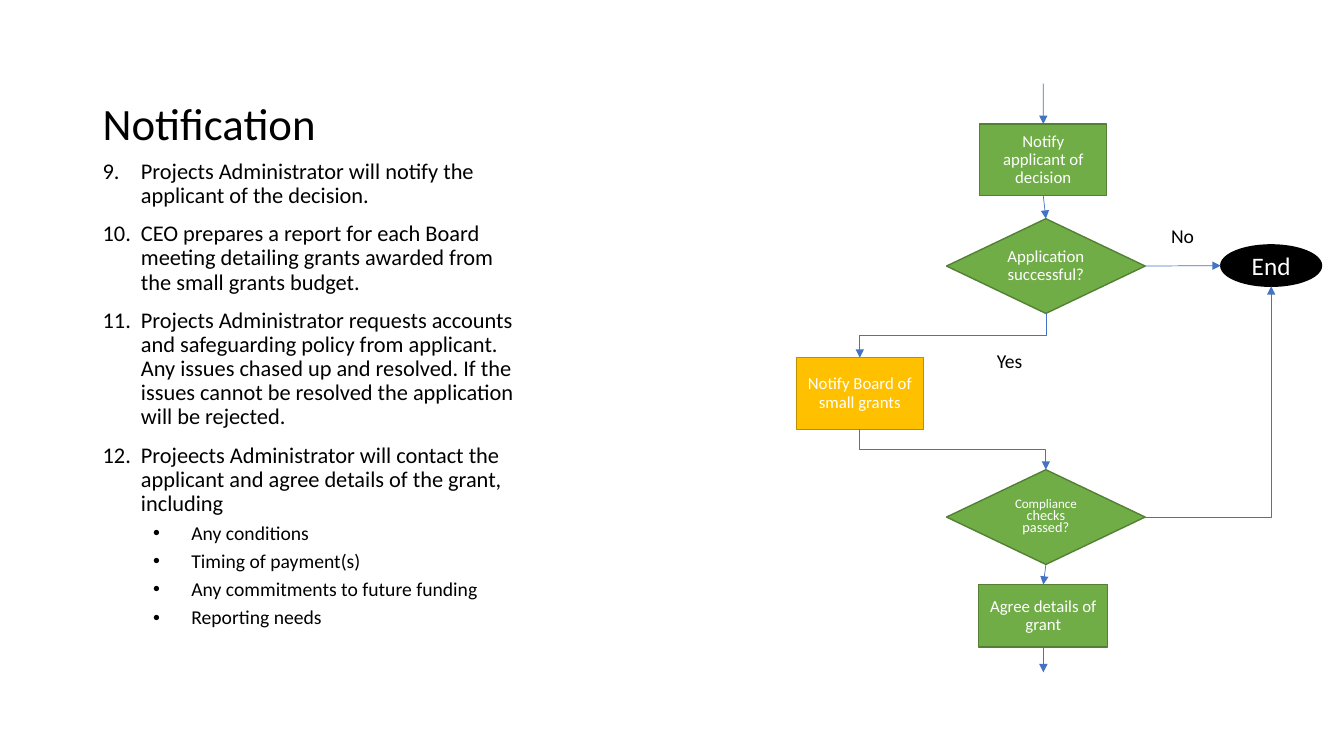
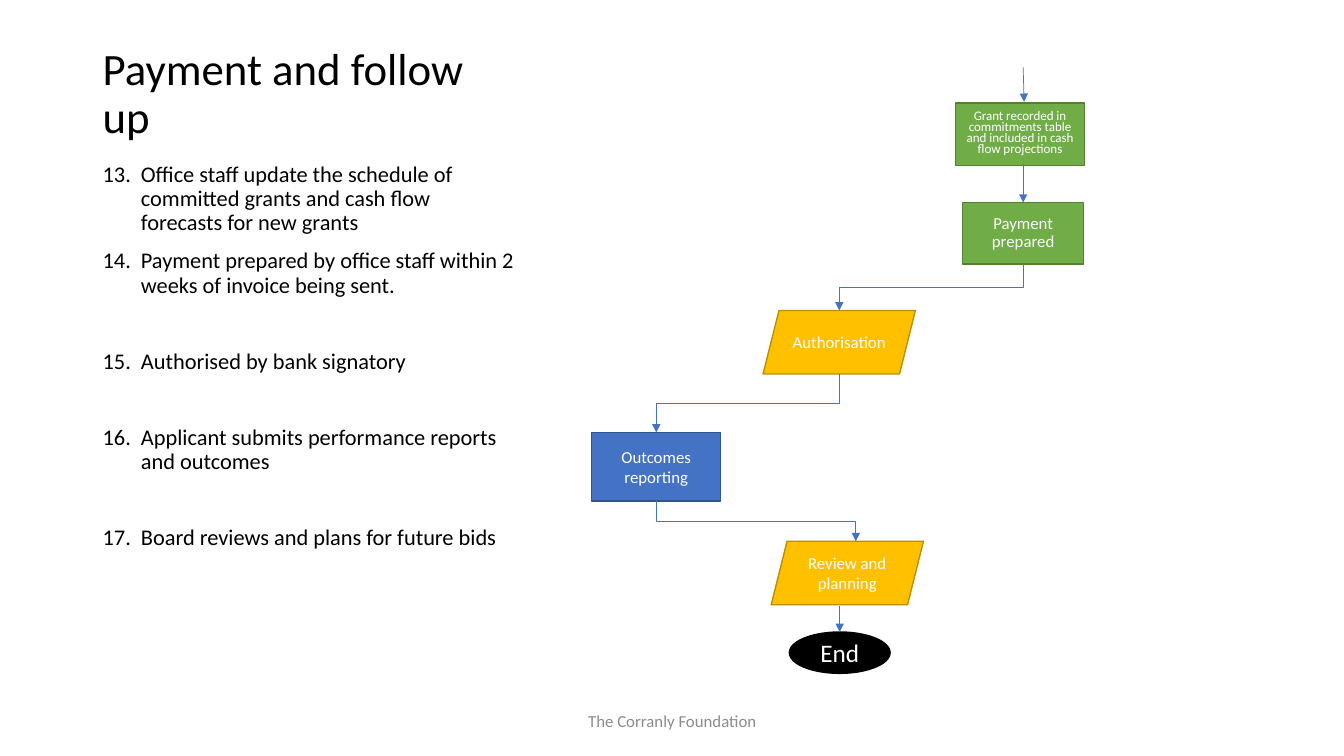
import lxml.etree
import pptx
import pptx.dml.color
import pptx.enum.shapes
import pptx.enum.text
import pptx.oxml.ns
import pptx.util

qn = pptx.oxml.ns.qn
SHAPE = pptx.enum.shapes.MSO_SHAPE
LINE = pptx.enum.shapes.MSO_CONNECTOR
ANCHOR = pptx.enum.text.MSO_ANCHOR
ALIGN = pptx.enum.text.PP_ALIGN

# Shared look: colours, font and a grid of 100 columns by 100 rows
FONT = "Calibri"
BLACK, WHITE, GREY, BLUE = "000000", "FFFFFF", "8C8C8C", "4472C4"
GREEN_BOX = ("70AD47", "538035")
GOLD_BOX = ("FFC000", "BD8E00")
BLUE_BOX = (BLUE, "325491")
BLACK_BOX = (BLACK, BLACK)
TEXT_LEFT, TEXT_WIDTH, TEXT_BOTTOM = 6.9, 32.25, 85.6
TITLE_TOP = 6.67
STEP, SMALL_STEP, PAYMENT = (9.45, 9.47), (9.6, 8.27), (9, 8.13)
DECISION, SLANTED, REPORT, END = (14.78, 12.53), (11.33, 8.4), (9.6, 9.07), (7.5, 5.47)
SITES = [(0.5, 0), (0, 0.5), (0.5, 1), (1, 0.5)]
TOP, LEFT, BOTTOM, RIGHT = range(4)

prs = pptx.Presentation()
prs.slide_width = pptx.util.Inches(13.33)
prs.slide_height = pptx.util.Inches(7.5)
COL, ROW = prs.slide_width / 100, prs.slide_height / 100


def paint(fill, color):
    fill.solid()
    fill.fore_color.rgb = pptx.dml.color.RGBColor.from_string(color)


def write(sp, text, size=12, color=BLACK, align=ALIGN.LEFT, anchor=ANCHOR.TOP,
          wrap=True, spacing=1.0, before=0, bullet=None):
    """Add one paragraph; text is a string or a list of (text, size) runs."""
    tf = sp.text_frame
    tf.word_wrap, tf.vertical_anchor = wrap, anchor
    p = tf.add_paragraph() if tf.text else tf.paragraphs[0]
    p.alignment, p.line_spacing = align, spacing
    p.space_before = pptx.util.Pt(before)
    if bullet:
        numbered = isinstance(bullet, int)
        p.level = 0 if numbered else 1
        pPr = p._p.get_or_add_pPr()
        pPr.set("marL", str(pptx.util.Inches(0.38 if numbered else 0.88)))
        pPr.set("indent", str(pptx.util.Inches(-0.38)))
        if numbered:
            lxml.etree.SubElement(pPr, qn("a:buAutoNum"), type="arabicPeriod", startAt=str(bullet))
        else:
            lxml.etree.SubElement(pPr, qn("a:buFont"), typeface="Arial")
            lxml.etree.SubElement(pPr, qn("a:buChar"), char=bullet)
    for part, points in text if isinstance(text, list) else [(text, size)]:
        r = p.add_run()
        r.text = part
        r.font.name, r.font.size = FONT, pptx.util.Pt(points)
        paint(r.font.fill, color)


# Content. Items: (text, space before). Nodes: name, shape, left, top, size,
# colours, text, format. Arrows: kind, start, end; an end is a point or a node's side.
tight = {"spacing": 0.9}
dense = {"spacing": 0.7, "size": 9.3}
slides = [
    {
        "title": "Notification", "body_top": 20.53, "first": 9,
        "items": [
            ("Projects Administrator will notify the applicant of the decision.", 10),
            ("CEO prepares a report for each Board meeting detailing grants awarded "
             "from the small grants budget.", 10),
            ("Projects Administrator requests accounts and safeguarding policy from applicant. "
             "Any issues chased up and resolved. If the issues cannot be resolved the "
             "application will be rejected.", 10),
            ("Projeects Administrator will contact the applicant and agree details "
             "of the grant, including", 10),
        ],
        "subitems": ["Any conditions", "Timing of payment(s)",
                     "Any commitments to future funding", "Reporting needs"],
        "nodes": [
            ("notify", SHAPE.RECTANGLE, 72.9, 16.4, STEP, GREEN_BOX,
             "Notify applicant of decision", tight),
            ("successful", SHAPE.DIAMOND, 70.43, 28.93, DECISION, GREEN_BOX,
             "Application successful?", tight),
            ("end", SHAPE.OVAL, 90.83, 32.4, END, BLACK_BOX, "End", {"size": 18}),
            ("board", SHAPE.RECTANGLE, 59.25, 47.33, STEP, GOLD_BOX,
             "Notify Board of small grants", tight),
            ("compliance", SHAPE.DIAMOND, 70.43, 62.13, DECISION, GREEN_BOX,
             [("Compliance", 9.3), (" checks passed?", 10.2)], dense),
            ("agree", SHAPE.RECTANGLE, 72.83, 77.33, SMALL_STEP, GREEN_BOX,
             "Agree details of grant", tight),
        ],
        "arrows": [
            ("straight", (77.63, 11.07), ("notify", TOP)),
            ("straight", ("notify", BOTTOM), ("successful", TOP)),
            ("straight", ("successful", RIGHT), ("end", LEFT)),
            ("step", ("successful", BOTTOM), ("board", TOP)),
            ("step", ("board", BOTTOM), ("compliance", TOP)),
            ("corner", ("compliance", RIGHT), ("end", BOTTOM)),
            ("straight", ("compliance", BOTTOM), ("agree", TOP)),
            ("straight", ("agree", BOTTOM), (77.63, 88.93)),
        ],
        "labels": [
            ("No", (86.4, 28.93, 3.45, 4.53), {"size": 14, "wrap": False}),
            ("Yes", (73.43, 45.47, 3.6, 4.53), {"size": 14, "wrap": False}),
        ],
    },
    {
        "title": "Payment and follow up", "body_top": 20.93, "first": 13,
        "items": [
            ("Office staff update the schedule of committed grants and cash flow "
             "forecasts for new grants", 10),
            ("Payment prepared by office staff within 2 weeks of invoice being sent.", 10),
            ("Authorised by bank signatory", 37),
            ("Applicant submits performance reports and outcomes", 37),
            ("Board reviews and plans for future bids", 37),
        ],
        "subitems": [],
        "nodes": [
            ("grant", SHAPE.RECTANGLE, 71.1, 13.6, SMALL_STEP, GREEN_BOX,
             "Grant recorded in commitments table and included in cash flow projections", dense),
            ("payment", SHAPE.RECTANGLE, 71.63, 26.8, PAYMENT, GREEN_BOX,
             "Payment prepared", tight),
            ("authorise", SHAPE.PARALLELOGRAM, 56.78, 41.07, SLANTED, GOLD_BOX,
             "Authorisation", {}),
            ("outcomes", SHAPE.RECTANGLE, 44.03, 57.2, REPORT, BLUE_BOX,
             "Outcomes reporting", {}),
            ("review", SHAPE.PARALLELOGRAM, 57.38, 71.6, SLANTED, GOLD_BOX,
             "Review and planning", {}),
            ("end", SHAPE.OVAL, 58.73, 83.6, END, BLACK_BOX, "End", {"size": 18}),
        ],
        "arrows": [
            ("straight", (76.13, 8.93), (76.2, 13.47)),
            ("straight", (76.13, 21.73), ("payment", TOP)),
            ("step", ("payment", BOTTOM), ("authorise", TOP)),
            ("step", ("authorise", BOTTOM), ("outcomes", TOP)),
            ("step", ("outcomes", BOTTOM), (63.68, 71.6)),
            ("straight", (62.48, 80.13), ("end", TOP)),
        ],
        "labels": [
            ("The Corranly Foundation", (33.15, 92.67, 33.75, 5.33),
             {"color": GREY, "align": ALIGN.CENTER, "anchor": ANCHOR.MIDDLE}),
        ],
    },
]

for content in slides:
    s = prs.slides.add_slide(prs.slide_layouts[6])

    # Title, numbered list, labels
    body_top = content["body_top"]
    title_height = body_top - TITLE_TOP - (0.0 if content["first"] == 9 else 1.33)
    boxes = [
        (content["title"], (TEXT_LEFT, TITLE_TOP, TEXT_WIDTH, title_height),
         {"size": 32, "anchor": ANCHOR.BOTTOM, "spacing": 0.9}),
        *content["labels"],
    ]
    for text, (x, y, w, h), style in boxes:
        sp = s.shapes.add_textbox(int(x * COL), int(y * ROW), int(w * COL), int(h * ROW))
        write(sp, text, **style)
    body = s.shapes.add_textbox(int(TEXT_LEFT * COL), int(body_top * ROW),
                                int(TEXT_WIDTH * COL), int((TEXT_BOTTOM - body_top) * ROW))
    for text, before in content["items"]:
        write(body, text, size=16, spacing=0.9, before=before, bullet=content["first"])
    for text in content["subitems"]:
        write(body, text, size=14, spacing=0.9, before=5, bullet="•")

    # Flowchart nodes
    nodes = {}
    for name, kind, x, y, (w, h), (fill, edge), text, style in content["nodes"]:
        sp = s.shapes.add_shape(kind, int(x * COL), int(y * ROW), int(w * COL), int(h * ROW))
        sp.shadow.inherit = False
        paint(sp.fill, fill)
        paint(sp.line.fill, edge)
        sp.line.width = pptx.util.Pt(1)
        write(sp, text, color=WHITE, align=ALIGN.CENTER, anchor=ANCHOR.MIDDLE, **style)
        nodes[name] = sp

    # Flowchart arrows
    for kind, start, end in content["arrows"]:
        points = []
        for a, b in (start, end):
            if a in nodes:
                sp, (fx, fy) = nodes[a], SITES[b]
                points += [int(sp.left + fx * sp.width), int(sp.top + fy * sp.height)]
            else:
                points += [int(a * COL), int(b * ROW)]
        x1, y1, x2, y2 = points
        c = s.shapes.add_connector(LINE.STRAIGHT if kind == "straight" else LINE.ELBOW, *points)
        spPr = c._element.spPr
        if kind == "straight":
            for join, (name, site) in ((c.begin_connect, start), (c.end_connect, end)):
                if name in nodes and nodes[name].auto_shape_type != SHAPE.OVAL:
                    join(nodes[name], site)
        elif kind == "corner":
            spPr.find(qn("a:prstGeom")).set("prst", "bentConnector2")
        else:
            # Leaves downwards: a frame turned a quarter about its middle
            c.width, c.height = y2 - y1, abs(x2 - x1)
            c.left, c.top = (x1 + x2 - c.width) // 2, (y1 + y2 - c.height) // 2
            xfrm = spPr.find(qn("a:xfrm"))
            xfrm.set("rot", "5400000" if x2 < x1 else "16200000")
            xfrm.set("flipH", "0" if x2 < x1 else "1")
        paint(c.line.fill, BLUE)
        c.line.width = pptx.util.Pt(0.5)
        lxml.etree.SubElement(spPr.find(qn("a:ln")), qn("a:tailEnd"), type="triangle")
        lxml.etree.SubElement(spPr, qn("a:effectLst"))

prs.save("out.pptx")
